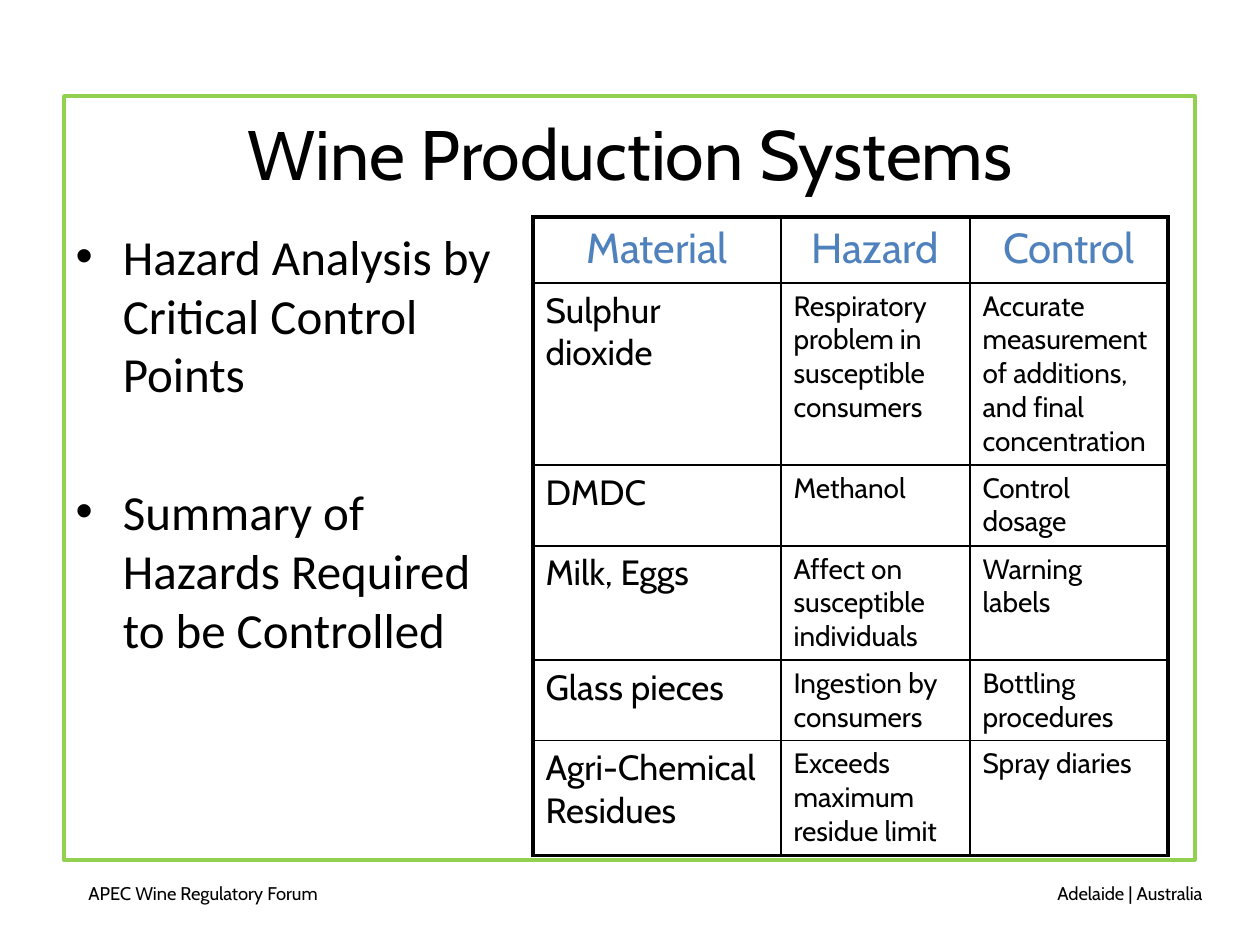
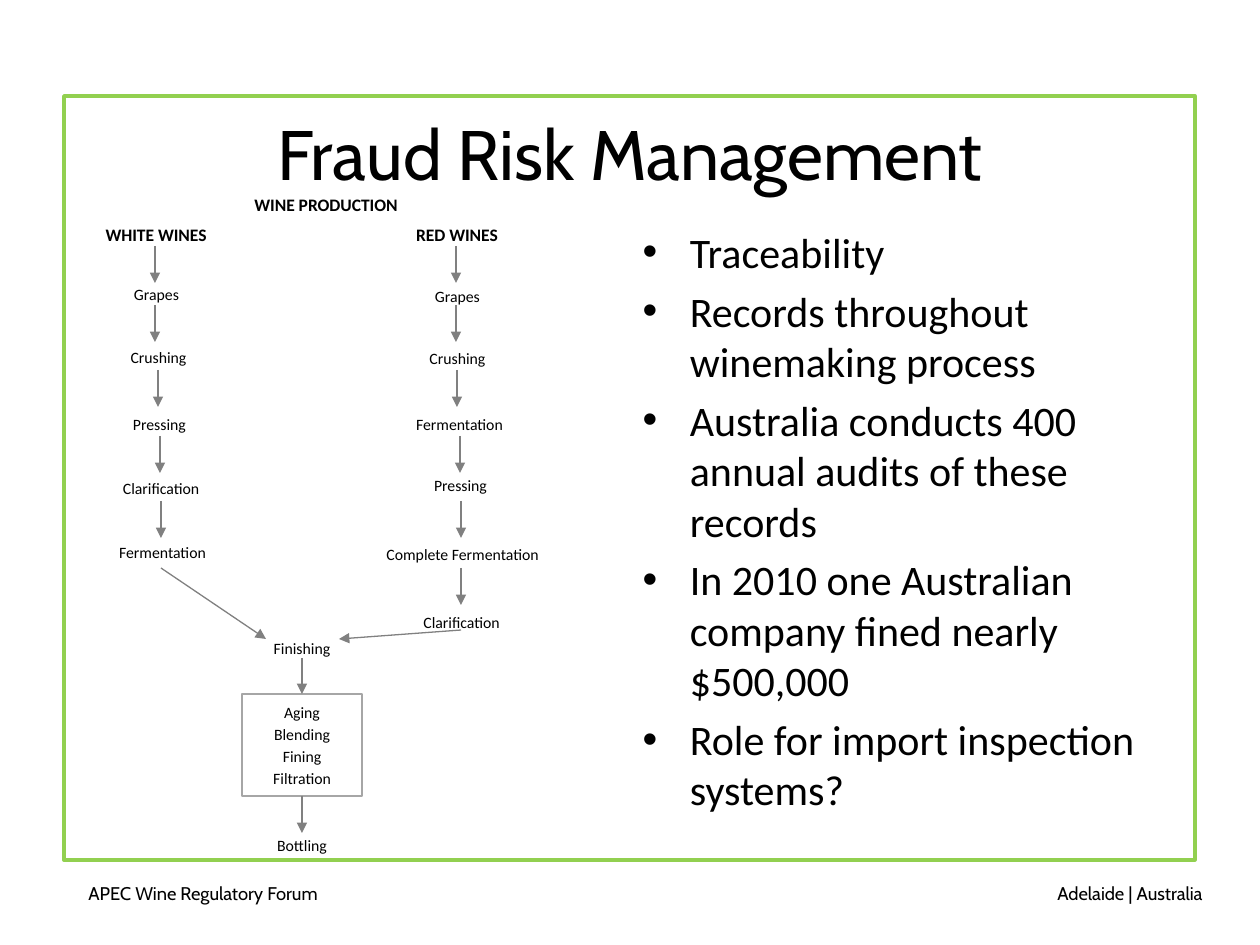
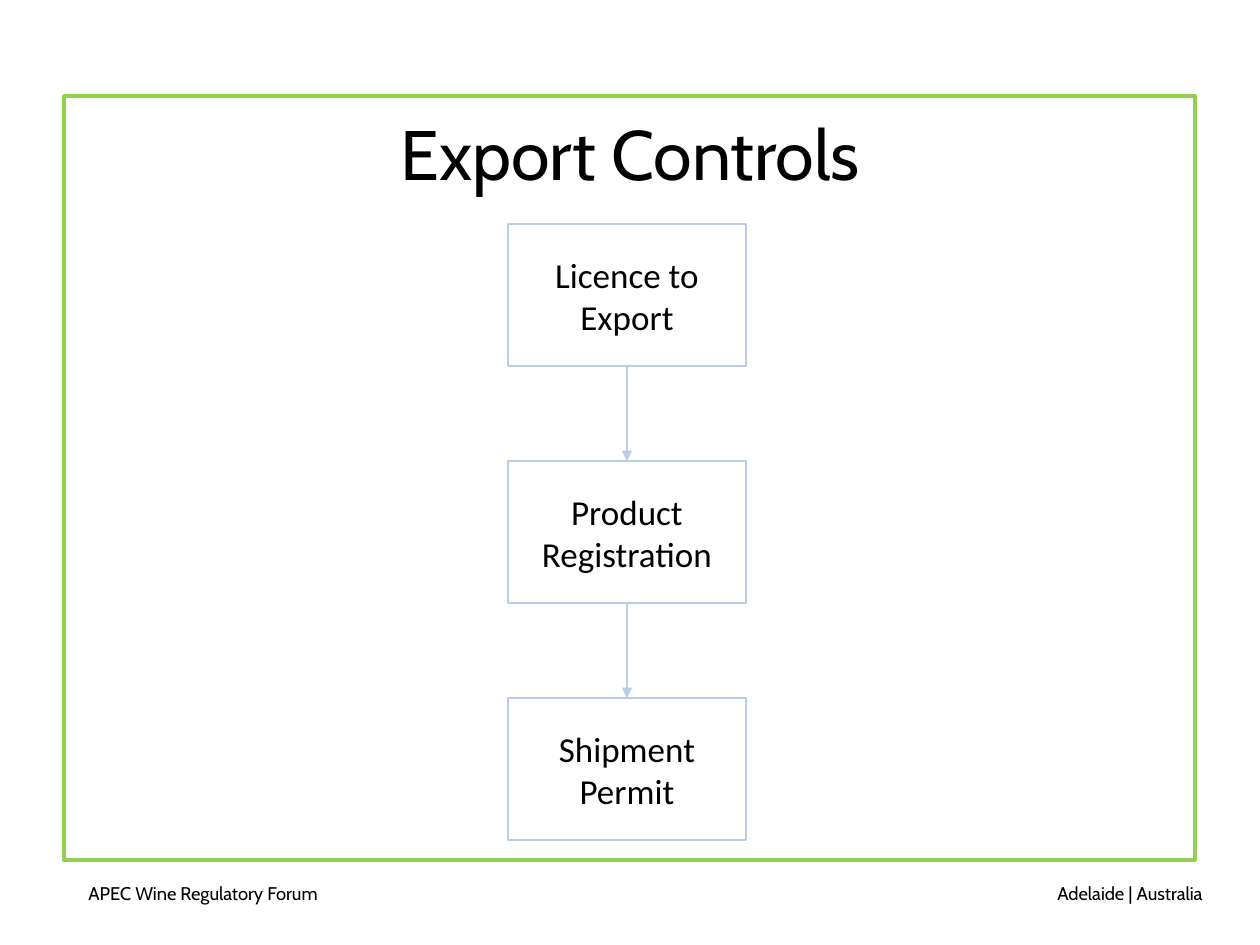
from itertools import pairwise

from lxml.etree import SubElement
from pptx import Presentation
from pptx.dml.color import RGBColor
from pptx.enum.shapes import MSO_CONNECTOR, MSO_SHAPE
from pptx.enum.text import MSO_ANCHOR, MSO_AUTO_SIZE, PP_ALIGN
from pptx.oxml import parse_xml
from pptx.oxml.ns import nsdecls, qn
from pptx.util import Emu, Inches, Pt

PX_PER_INCH = 126
COLORS = {
    "text": "000000",
    "paper": "FFFFFF",
    "frame": "92D050",
    "heading": "4F81BD",
    "flow": "808080",
    "step": "A6A6A6",
    "export": "B9CDE5",
}
TITLE_FONT, BODY_FONT = "Cabin", "Calibri"
TITLE_BOX = (63, 93, 1134, 118)
FRAME_BOX = (64, 96, 1131, 764)
FOOTERS = [
    ("APEC Wine Regulatory Forum", (76, 876, 296, 50), PP_ALIGN.LEFT),
    ("Adelaide | Australia", (919, 876, 296, 50), PP_ALIGN.RIGHT),
]
HAZARD_COLUMNS = [248, 189, 198]
HAZARD_HEIGHTS = [66, 182, 81, 114, 80, 115]
HAZARDS = [
    ("Material", "Hazard", "Control"),
    ("Sulphur dioxide", "Respiratory problem in susceptible consumers",
     "Accurate measurement of additions, and final concentration"),
    ("DMDC", "Methanol", "Control dosage"),
    ("Milk, Eggs", "Affect on susceptible individuals", "Warning\vlabels"),
    ("Glass pieces", "Ingestion by consumers", "Bottling procedures"),
    ("Agri-Chemical Residues", "Exceeds maximum residue limit", "Spray diaries"),
]
WHITE_STEPS = [
    ("WHITE WINES", 72, 30, 144),
    ("Grapes", 72, 91, 91),
    ("Crushing", 74, 154, 91),
    ("Pressing", 75, 221, 91),
    ("Clarification", 77, 285, 118),
    ("Fermentation", 78, 349, 127),
]
RED_STEPS = [
    ("RED WINES", 373, 30, 126),
    ("Grapes", 373, 93, 91),
    ("Crushing", 373, 155, 91),
    ("Fermentation", 375, 221, 127),
    ("Pressing", 376, 282, 91),
    ("Complete Fermentation", 378, 351, 213),
    ("Clarification", 377, 419, 121),
]
WHITE_ARROWS = [71, 71, 74, 76, 77]
RED_ARROWS = [372, 372, 373, 376, 377, 377]
ARROW_TOPS = [61, 120, 185, 251, 316, 383]
ARROW_LENGTH = 37


def px(*lengths):
    """Turn pixel lengths into EMU."""
    return [Emu(round(n * Inches(1) / PX_PER_INCH)) for n in lengths]


def rgb(name):
    """Look up a named colour."""
    return RGBColor.from_string(COLORS[name])


def style(p, size, font=BODY_FONT, color="text", align=None, bold=None):
    """Format a whole paragraph."""
    p.font.size, p.font.name, p.font.bold = Pt(size), font, bold
    p.font.color.rgb = rgb(color)
    p.alignment = align


def place(s, box):
    """Move and size a shape to a pixel box."""
    s.left, s.top, s.width, s.height = px(*box)


def add_text(shapes, box, text, size, font=BODY_FONT, align=PP_ALIGN.LEFT, bold=None, spacing=None):
    """Add a wrapped text box."""
    s = shapes.add_textbox(*px(*box))
    tf = s.text_frame
    tf.word_wrap = True
    tf.text = text
    style(tf.paragraphs[0], size, font, align=align, bold=bold)
    tf.paragraphs[0].line_spacing = spacing
    return s


def add_box(shapes, box, text="", size=9, fill="paper", line=None, width=0.75,
            anchor=MSO_ANCHOR.TOP, spacing=None, bold=None):
    """Add a rectangle with centred text."""
    s = shapes.add_shape(MSO_SHAPE.RECTANGLE, *px(*box))
    s.shadow.inherit = False
    if fill:
        s.fill.solid()
        s.fill.fore_color.rgb = rgb(fill)
    else:
        s.fill.background()
    if line:
        s.line.color.rgb = rgb(line)
        s.line.width = Pt(width)
    else:
        s.line.fill.background()
    tf = s.text_frame
    tf.text = text
    tf.vertical_anchor = anchor
    for p in tf.paragraphs:
        style(p, size, align=PP_ALIGN.CENTER, bold=bold)
        p.line_spacing = spacing
    return s


def add_arrow(shapes, start, end, color, width):
    """Add a straight arrow between two pixel points."""
    c = shapes.add_connector(MSO_CONNECTOR.STRAIGHT, *px(*start, *end))
    c.line.color.rgb = rgb(color)
    c.line.width = Pt(width)
    spPr = c.element.spPr
    SubElement(spPr.find(qn("a:ln")), qn("a:tailEnd"), type="triangle")
    SubElement(spPr, qn("a:effectLst"))
    return c


def add_furniture(prs, slide):
    """Put the frame and footers on the slide master."""
    parts = [add_box(slide.shapes, FRAME_BOX, fill=None, line="frame", width=2)]
    parts += [add_text(slide.shapes, box, text, 10.5, TITLE_FONT, align) for text, box, align in FOOTERS]
    for number, s in enumerate(parts, 20):
        s.element.xpath(".//p:cNvPr")[0].set("id", str(number))
        prs.slide_master.shapes.element.append(s.element)


def add_slide(prs, layout, title):
    """Add a slide with its title."""
    slide = prs.slides.add_slide(prs.slide_layouts.get_by_name(layout))
    s = slide.shapes.title
    place(s, TITLE_BOX)
    s.text_frame.text = title
    s.text_frame.vertical_anchor = MSO_ANCHOR.MIDDLE
    style(s.text_frame.paragraphs[0], 40, TITLE_FONT, align=PP_ALIGN.CENTER)
    return slide


def fill_body(slide, box, items, size, gap=None):
    """Fill the body placeholder with bullets."""
    s = slide.placeholders[1]
    place(s, box)
    tf = s.text_frame
    tf.text = "\n".join(items)
    tf.auto_size = MSO_AUTO_SIZE.NONE
    for i, p in enumerate(tf.paragraphs):
        style(p, size)
        p.space_before = (gap and Pt(gap)) if i else Pt(0)


def set_borders(cell, widths):
    """Draw the left, right, top and bottom borders of a cell."""
    tcPr = cell._tc.get_or_add_tcPr()
    for i, (side, width) in enumerate(zip("LRTB", widths)):
        tcPr.insert(i, parse_xml(
            f'<a:ln{side} {nsdecls("a")} w="{Pt(width)}"><a:solidFill>'
            f'<a:srgbClr val="{COLORS["text"]}"/></a:solidFill></a:ln{side}>'))


def add_hazard_table(slide, left, top):
    """Add the table of hazards with a heavy outer border."""
    rows, cols = len(HAZARDS), len(HAZARD_COLUMNS)
    box = (left, top, sum(HAZARD_COLUMNS), sum(HAZARD_HEIGHTS))
    table = slide.shapes.add_table(rows, cols, *px(*box)).table
    table.first_row = table.horz_banding = False
    for column, width in zip(table.columns, px(*HAZARD_COLUMNS)):
        column.width = width
    for row, height in zip(table.rows, px(*HAZARD_HEIGHTS)):
        row.height = height
    for i, texts in enumerate(HAZARDS):
        for j, text in enumerate(texts):
            cell = table.cell(i, j)
            cell.text = text
            cell.fill.background()
            p = cell.text_frame.paragraphs[0]
            if i == 0:
                style(p, 24, TITLE_FONT, "heading", PP_ALIGN.CENTER)
            else:
                style(p, 16 if j else 20, TITLE_FONT)
            outer = (j == 0, j == cols - 1, i == 0, i == rows - 1)
            set_borders(cell, [2.25 if edge else 1 for edge in outer])


def add_wine_flow(slide, left, top):
    """Add the two production lines that meet at finishing."""
    shapes = slide.shapes

    def at(x, y, *size):
        return (left + x, top + y, *size)

    def arrow(start, end):
        return add_arrow(shapes, at(*start), at(*end), "flow", 0.75)

    add_text(shapes, at(158, 0, 170, 45), "WINE PRODUCTION", 10, bold=True, spacing=1.15)
    for steps in (WHITE_STEPS, RED_STEPS):
        for i, (text, center, y, width) in enumerate(steps):
            add_box(shapes, at(center - width // 2, y, width, 38 if i else 44), text,
                    9 if i else 10, spacing=1.15, bold=i == 0)
    add_box(shapes, at(158, 445, 120, 38), "Finishing", spacing=1.15)
    cellar = add_box(shapes, at(158, 509, 120, 102), "Aging\nBlending\nFining Filtration",
                     line="step", spacing=1.15)
    add_text(shapes, at(158, 642, 120, 35), "Bottling", 9, align=PP_ALIGN.CENTER, spacing=1.15)
    for xs in (WHITE_ARROWS, RED_ARROWS):
        for x, y in zip(xs, ARROW_TOPS):
            arrow((x, y), (x, y + ARROW_LENGTH))
    arrow((77, 383), (182, 454))
    arrow((377, 445), (255, 454))
    arrow((218, 473), (218, 509)).end_connect(cellar, 0)
    arrow((218, 611), (218, 648)).begin_connect(cellar, 2)


def add_export_steps(slide, box, steps, height):
    """Add equally spaced steps joined by arrows."""
    left, top, width, total = box
    pitch = (total - height) // (len(steps) - 1)
    boxes = [add_box(slide.shapes, (left, top + i * pitch, width, height), text, 20,
                     line="export", width=1.5, anchor=MSO_ANCHOR.MIDDLE)
             for i, text in enumerate(steps)]
    for upper, lower in pairwise(boxes):
        c = add_arrow(slide.shapes, (left, top), (left, top), "export", 1.25)
        c.begin_connect(upper, 2)
        c.end_connect(lower, 0)


def main():
    """Build the three slides."""
    prs = Presentation()
    prs.slide_width, prs.slide_height = Inches(10), Inches(7.5)

    slide = add_slide(prs, "Title and Content", "Wine Production Systems")
    add_furniture(prs, slide)
    fill_body(slide, (63, 220, 457, 624), [
        "Hazard Analysis by Critical Control Points",
        "Summary of Hazards Required to be Controlled",
    ], 28, gap=45)
    add_hazard_table(slide, 533, 217)

    slide = add_slide(prs, "Title and Content", "Fraud Risk Management")
    add_wine_flow(slide, 84, 185)
    fill_body(slide, (630, 220, 567, 624), [
        "Traceability",
        "Records throughout winemaking process",
        "Australia conducts 400 annual audits of these records",
        "In 2010 one Australian company fined nearly $500,000",
        "Role for import inspection systems?",
    ], 24)

    slide = add_slide(prs, "Title Only", "Export Controls")
    add_export_steps(slide, (508, 224, 238, 616),
                     ["Licence to Export", "Product Registration", "Shipment Permit"], 142)
    prs.save("out.pptx")


if __name__ == "__main__":
    main()
